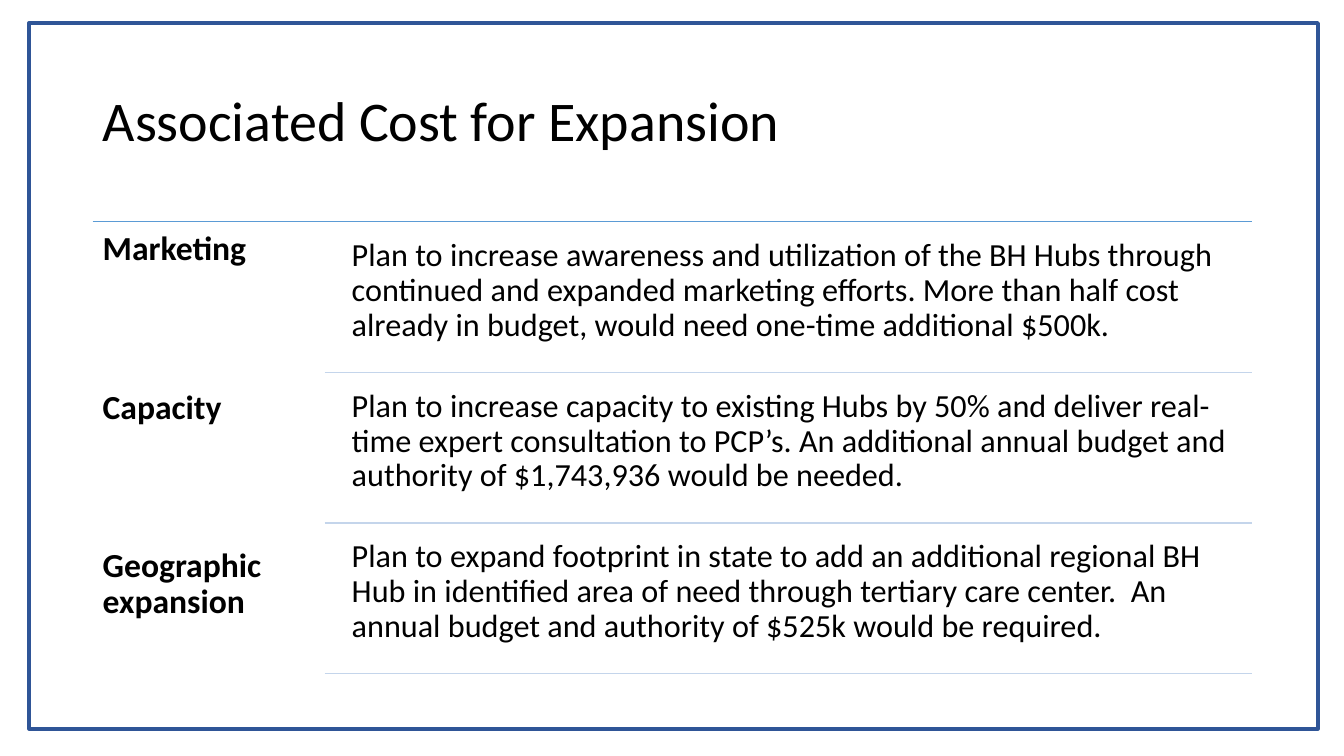
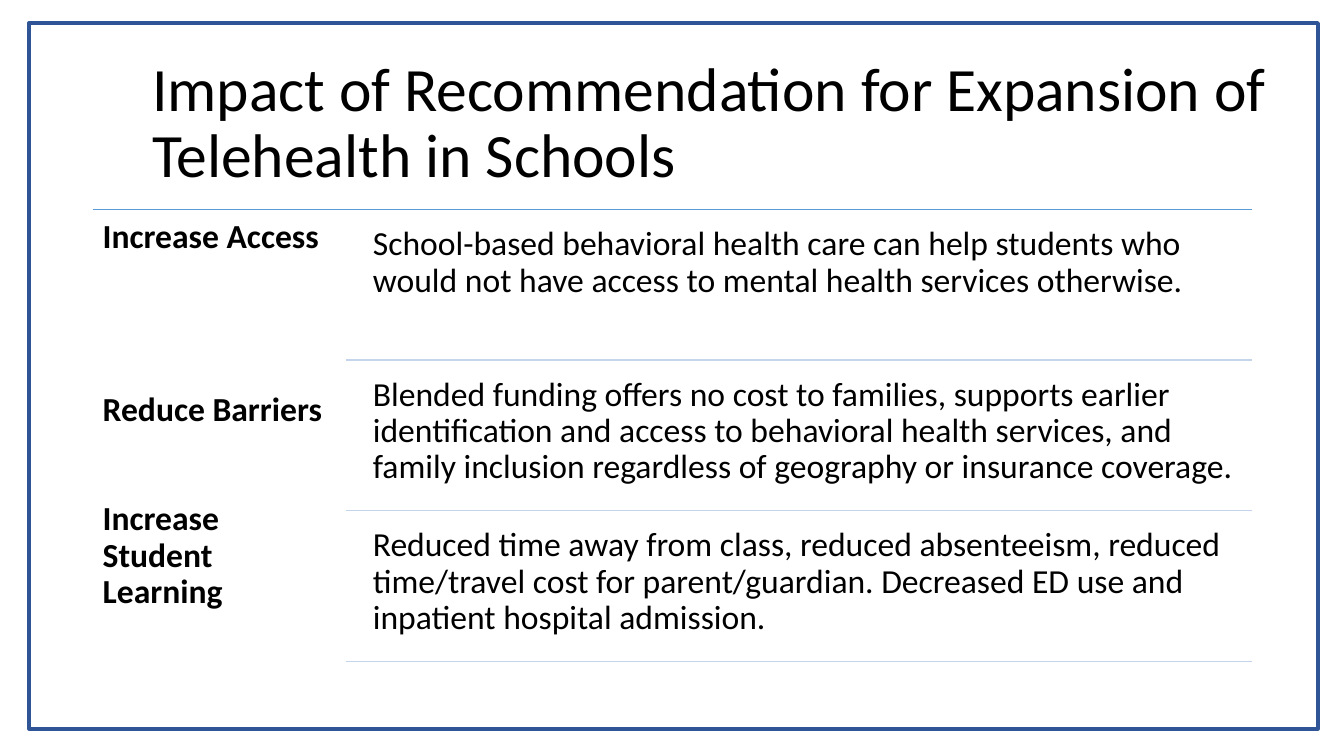
import pptx
import pptx.dml.color
import pptx.enum.shapes
import pptx.enum.text
import pptx.oxml.ns
import pptx.util
from lxml import etree

Inches = pptx.util.Inches
ANCHOR = pptx.enum.text.MSO_ANCHOR

FONT = "Calibri"
TEXT, FRAME, TOP_RULE, ROW_RULE = "000000", "2F5597", "5B9BD5", "C4D5EB"
LABEL_SIZE = 24
LIST_LEFT, LIST_RIGHT, LIST_HEIGHT = 0.92, 12.42, 4.48
BODY_INDENT, BODY_DROP = 0.17, 0.07
LABEL_GAP = 0.05

SLIDES = [
    {
        "title": "Associated Cost for Expansion",
        "title_box": (0.92, 0.6, 11.5, 1.24),
        "title_size": 40,
        "top": 2.2,
        "label_width": 2.3,
        "body_size": 23,
        # label, its distance below the top rule, description
        "rows": [
            ("Marketing", 0,
             "Plan to increase awareness and utilization of the BH Hubs through "
             "continued and expanded marketing efforts. More than half cost "
             "already in budget, would need one-time additional $500k."),
            ("Capacity", 1.57,
             "Plan to increase capacity to existing Hubs by 50% and deliver "
             "real-time expert consultation to PCP’s. An additional annual "
             "budget and authority of $1,743,936 would be needed."),
            ("Geographic expansion", 3.14,
             "Plan to expand footprint in state to add an additional regional BH "
             "Hub in identified area of need through tertiary care center.  An "
             "annual budget and authority of $525k would be required."),
        ],
    },
    {
        "title": "Impact of Recommendation for Expansion of Telehealth in Schools",
        "title_box": (1.41, 0.67, 11.83, 1.13),
        "title_size": 44,
        "top": 2.08,
        "label_width": 2.51,
        "body_size": 24,
        "rows": [
            ("Increase Access", 0,
             "School-based behavioral health care can help students who would "
             "not have access to mental health services otherwise."),
            ("Reduce Barriers", 1.71,
             "Blended funding offers no cost to families, supports earlier "
             "identification and access to behavioral health services, and "
             "family inclusion regardless of geography or insurance coverage."),
            ("Increase Student Learning", 2.8,
             "Reduced time away from class, reduced absenteeism, reduced "
             "time/travel cost for parent/guardian. Decreased ED use and "
             "inpatient hospital admission."),
        ],
    },
]


def color(hex_value):
    return pptx.dml.color.RGBColor.from_string(hex_value)


def add_text(slide, box, text, size, bold=False, anchor=ANCHOR.TOP, inset=0.1):
    frame = slide.shapes.add_textbox(*map(Inches, box)).text_frame
    frame.word_wrap = True
    frame.vertical_anchor = anchor
    frame.margin_left = frame.margin_right = Inches(0.1)
    frame.margin_top = frame.margin_bottom = Inches(inset)
    frame.text = text
    paragraph = frame.paragraphs[0]
    paragraph.line_spacing = 0.9
    font = paragraph.runs[0].font
    font.name, font.size, font.bold = FONT, pptx.util.Pt(size), bold
    font.color.rgb = color(TEXT)


def add_rule(slide, left, right, y, hex_value):
    rule = slide.shapes.add_connector(
        pptx.enum.shapes.MSO_CONNECTOR.STRAIGHT,
        Inches(left), Inches(y), Inches(right), Inches(y))
    rule.line.color.rgb = color(hex_value)
    rule.line.width = pptx.util.Pt(1)
    etree.SubElement(rule._element.spPr, pptx.oxml.ns.qn("a:effectLst"))


def add_frame(slide):
    frame = slide.shapes.add_shape(
        pptx.enum.shapes.MSO_SHAPE.RECTANGLE,
        Inches(0.29), Inches(0.23), Inches(12.78), Inches(7))
    frame.shadow.inherit = False
    frame.fill.background()
    frame.line.color.rgb = color(FRAME)
    frame.line.width = pptx.util.Pt(3)


def add_list(slide, box, label_width, body_size, rows):
    """Labels on the left, ruled descriptions on the right."""
    left, top, width, height = box
    right = left + width
    rule_left = left + label_width
    body_left = rule_left + BODY_INDENT
    pitch = height / len(rows)
    add_rule(slide, left, right, top, TOP_RULE)
    for index, (label, label_drop, body) in enumerate(rows):
        row_top = top + index * pitch
        add_text(slide, (left, top + label_drop, label_width - LABEL_GAP, 1),
                 label, LABEL_SIZE, bold=True)
        add_text(slide, (body_left, row_top + BODY_DROP,
                         right - body_left, pitch - BODY_DROP),
                 body, body_size)
        add_rule(slide, rule_left, right, row_top + pitch, ROW_RULE)


def add_list_slide(deck, content):
    slide = deck.slides.add_slide(deck.slide_layouts[6])
    add_frame(slide)
    add_text(slide, content["title_box"], content["title"],
             content["title_size"], anchor=ANCHOR.MIDDLE, inset=0.05)
    list_box = (LIST_LEFT, content["top"], LIST_RIGHT - LIST_LEFT, LIST_HEIGHT)
    add_list(slide, list_box, content["label_width"],
             content["body_size"], content["rows"])


def main():
    deck = pptx.Presentation()
    deck.slide_width, deck.slide_height = Inches(13.33), Inches(7.5)
    for content in SLIDES:
        add_list_slide(deck, content)
    deck.save("out.pptx")


if __name__ == "__main__":
    main()
